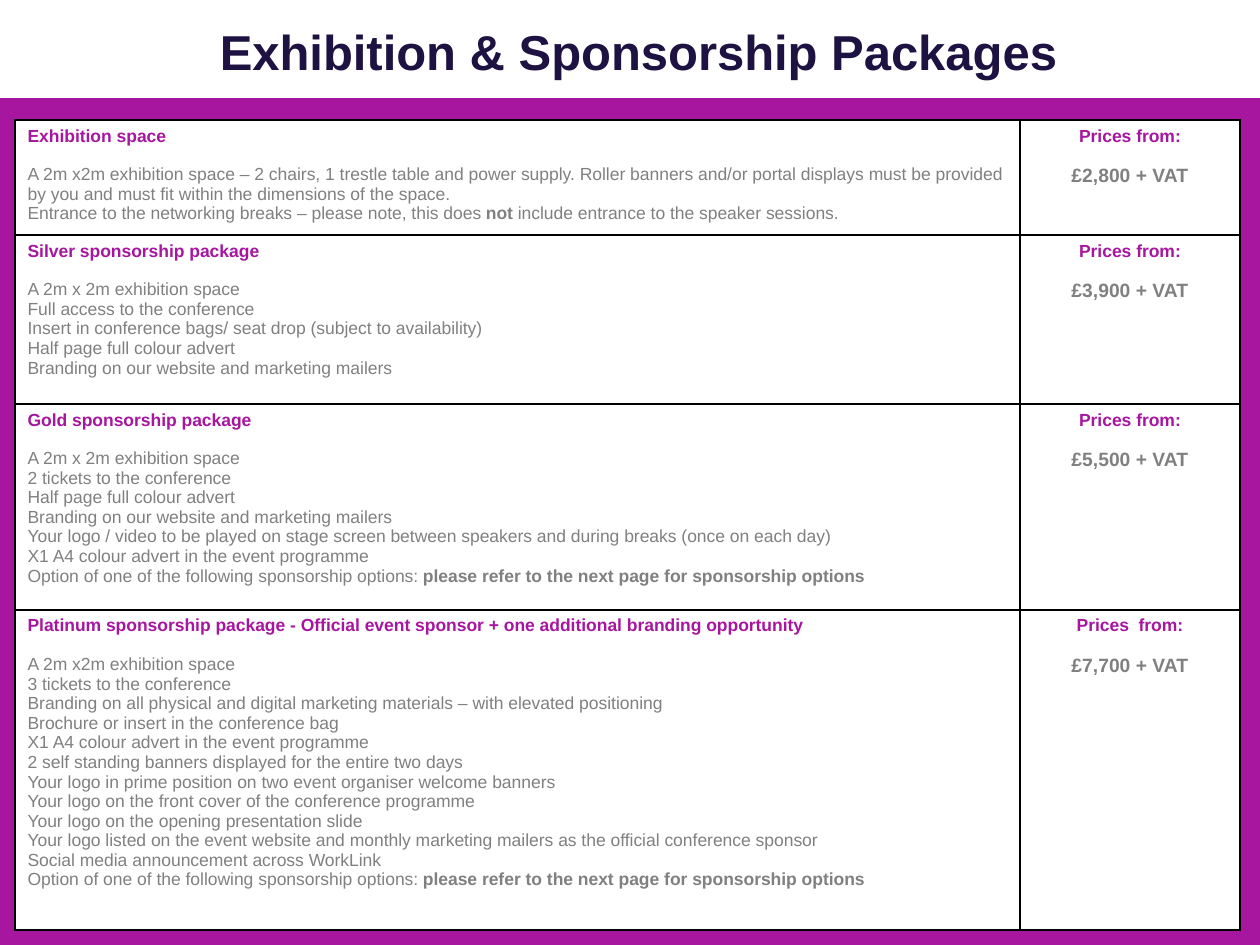
from dataclasses import dataclass

import pptx
import pptx.dml.color
import pptx.enum.shapes
import pptx.enum.text
import pptx.oxml
import pptx.oxml.ns
import pptx.util

PX = 914400 / 126
FONT = "Arial"
COLORS = {
    "purple": "A6169F",
    "navy": "1E1242",
    "grey": "808080",
    "white": "FFFFFF",
    "black": "000000",
}
ALIGN = pptx.enum.text.PP_ALIGN


@dataclass(frozen=True)
class Run:
    text: str
    bold: bool = False


@dataclass(frozen=True)
class Package:
    name: str
    lines: list[list[Run]]
    price: str
    height: int
    price_label: str = "Prices from:"


def px(n: int) -> int:
    return round(n * PX)


def rgb(name: str) -> pptx.dml.color.RGBColor:
    return pptx.dml.color.RGBColor.from_string(COLORS[name])


def plain(*texts: str) -> list[list[Run]]:
    return [[Run(text)] for text in texts]


def add_run(p, run: Run, size: int, color: str) -> None:
    r = p.add_run()
    r.text = run.text
    r.font.name = FONT
    r.font.size = pptx.util.Pt(size)
    r.font.bold = run.bold
    r.font.color.rgb = rgb(color)


def set_borders(cell) -> None:
    tc_pr = cell._tc.get_or_add_tcPr()
    ns = pptx.oxml.ns.nsdecls("a")
    for i, side in enumerate(("lnL", "lnR", "lnT", "lnB")):
        tc_pr.insert(i, pptx.oxml.parse_xml(
            f'<a:{side} {ns} w="12700"><a:solidFill>'
            f'<a:srgbClr val="{COLORS["black"]}"/></a:solidFill></a:{side}>'))


def fill_cell(cell, heading: str, lines: list[list[Run]], size: int, align) -> None:
    cell.fill.solid()
    cell.fill.fore_color.rgb = rgb("white")
    set_borders(cell)
    tf = cell.text_frame
    p = tf.paragraphs[0]
    p.alignment = align
    p.space_after = pptx.util.Pt(11)
    add_run(p, Run(heading, True), 10, "purple")
    for line in lines:
        p = tf.add_paragraph()
        p.alignment = align
        for run in line:
            add_run(p, run, size, "grey")


def add_packages(s, packages: list[Package]) -> None:
    widths = (1005, 220)
    height = sum(package.height for package in packages)
    frame = s.shapes.add_table(len(packages), len(widths), px(15), px(120),
                               px(sum(widths)), px(height))
    table = frame.table
    for column, width in zip(table.columns, widths):
        column.width = px(width)
    for i, package in enumerate(packages):
        table.rows[i].height = px(package.height)
        fill_cell(table.cell(i, 0), package.name, package.lines, 10, ALIGN.LEFT)
        fill_cell(table.cell(i, 1), package.price_label,
                  [[Run(package.price, True)]], 11, ALIGN.CENTER)


def add_title(s, text: str) -> None:
    sp = s.shapes.add_shape(pptx.enum.shapes.MSO_SHAPE.RECTANGLE,
                            0, 0, px(1260), px(96))
    sp.shadow.inherit = False
    sp.fill.solid()
    sp.fill.fore_color.rgb = rgb("white")
    sp.line.color.rgb = rgb("white")
    sp.line.width = pptx.util.Pt(2)

    title = s.shapes.title
    title.left, title.top, title.width, title.height = map(px, (55, 15, 1167, 72))
    title.element.getparent().append(title.element)
    tf = title.text_frame
    tf.word_wrap = True
    tf.auto_size = pptx.enum.text.MSO_AUTO_SIZE.NONE
    tf.vertical_anchor = pptx.enum.text.MSO_ANCHOR.MIDDLE
    p = tf.paragraphs[0]
    p.alignment = ALIGN.CENTER
    add_run(p, Run(text, True), 28, "navy")


OPTIONS = [
    Run("Option of one of the following sponsorship options: "),
    Run("please refer to the next page for sponsorship options", True),
]
ADVERT = "X1 A4 colour advert in the event programme"
HALF_PAGE = "Half page full colour advert"
BRANDING = "Branding on our website and marketing mailers"

PACKAGES = [
    Package("Exhibition space", [
        [Run("A 2m x2m exhibition space – 2 chairs, 1 trestle table and power supply. "
             "Roller banners and/or portal displays must be provided by you and must "
             "fit within the dimensions of the space.")],
        [Run("Entrance to the networking breaks – please note, this does "),
         Run("not", True),
         Run(" include entrance to the speaker sessions.")],
    ], "£2,800 + VAT", 115),
    Package("Silver sponsorship package", plain(
        "A 2m x 2m exhibition space",
        "Full access to the conference",
        "Insert in conference bags/ seat drop (subject to availability)",
        HALF_PAGE,
        BRANDING,
    ), "£3,900 + VAT", 169),
    Package("Gold sponsorship package", plain(
        "A 2m x 2m exhibition space",
        "2 tickets to the conference",
        HALF_PAGE,
        BRANDING,
        "Your logo / video to be played on stage screen between speakers "
        "and during breaks (once on each day)",
        ADVERT,
    ) + [OPTIONS], "£5,500 + VAT", 206),
    Package("Platinum sponsorship package - Official event sponsor "
            "+ one additional branding opportunity", plain(
        "A 2m x2m exhibition space",
        "3 tickets to the conference",
        "Branding on all physical and digital marketing materials – "
        "with elevated positioning",
        "Brochure or insert in the conference bag",
        ADVERT,
        "2 self standing banners displayed for the entire two days",
        "Your logo in prime position on two event organiser welcome banners",
        "Your logo on the front cover of the conference programme",
        "Your logo on the opening presentation slide",
        "Your logo listed on the event website and monthly marketing mailers "
        "as the official conference sponsor",
        "Social media announcement across WorkLink",
    ) + [OPTIONS], "£7,700 + VAT", 320, "Prices  from:"),
]


def main() -> None:
    prs = pptx.Presentation()
    prs.slide_width, prs.slide_height = px(1260), px(945)
    s = prs.slides.add_slide(prs.slide_layouts[5])
    s.background.fill.solid()
    s.background.fill.fore_color.rgb = rgb("purple")
    add_packages(s, PACKAGES)
    add_title(s, "Exhibition & Sponsorship Packages")
    prs.save("out.pptx")


if __name__ == "__main__":
    main()
